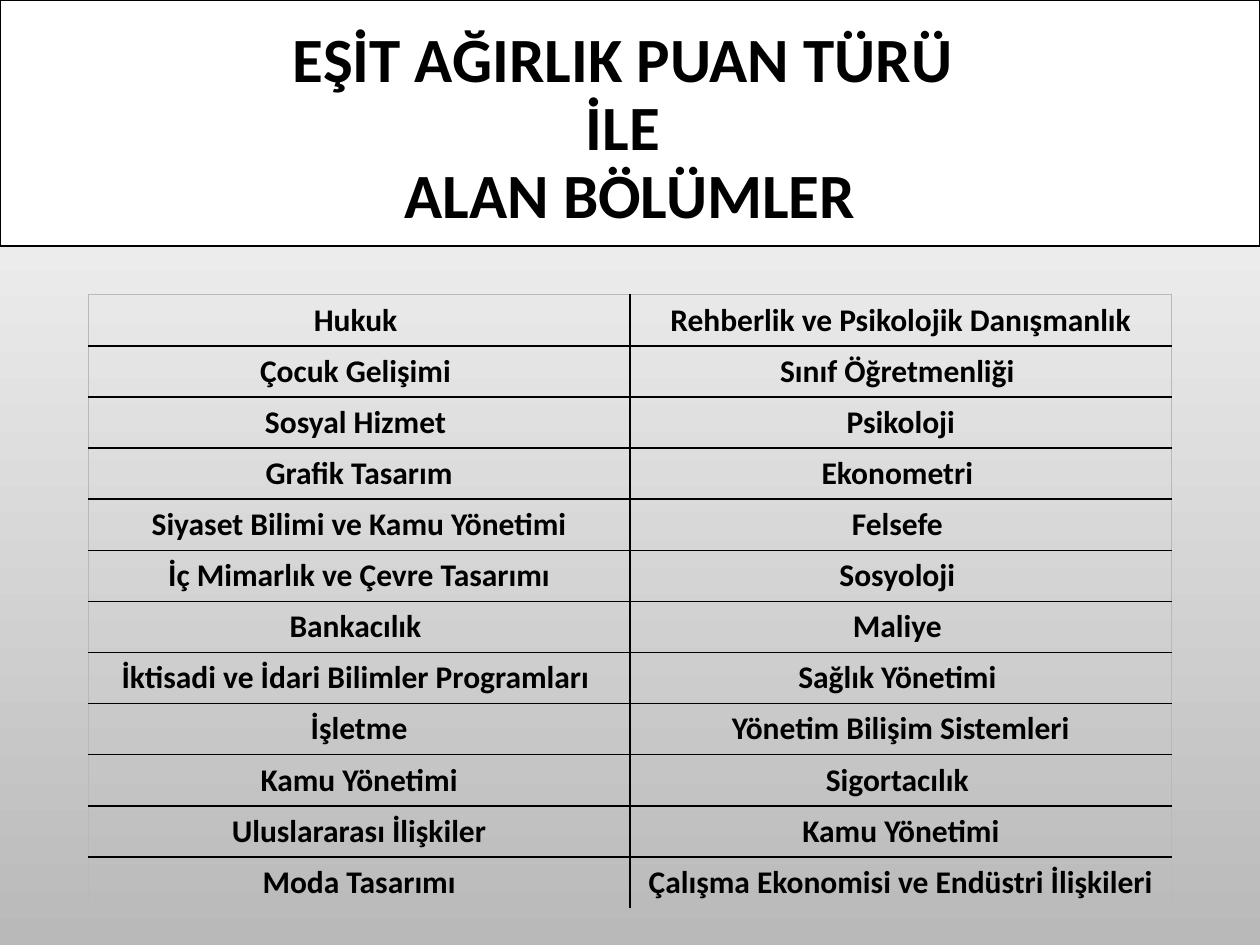
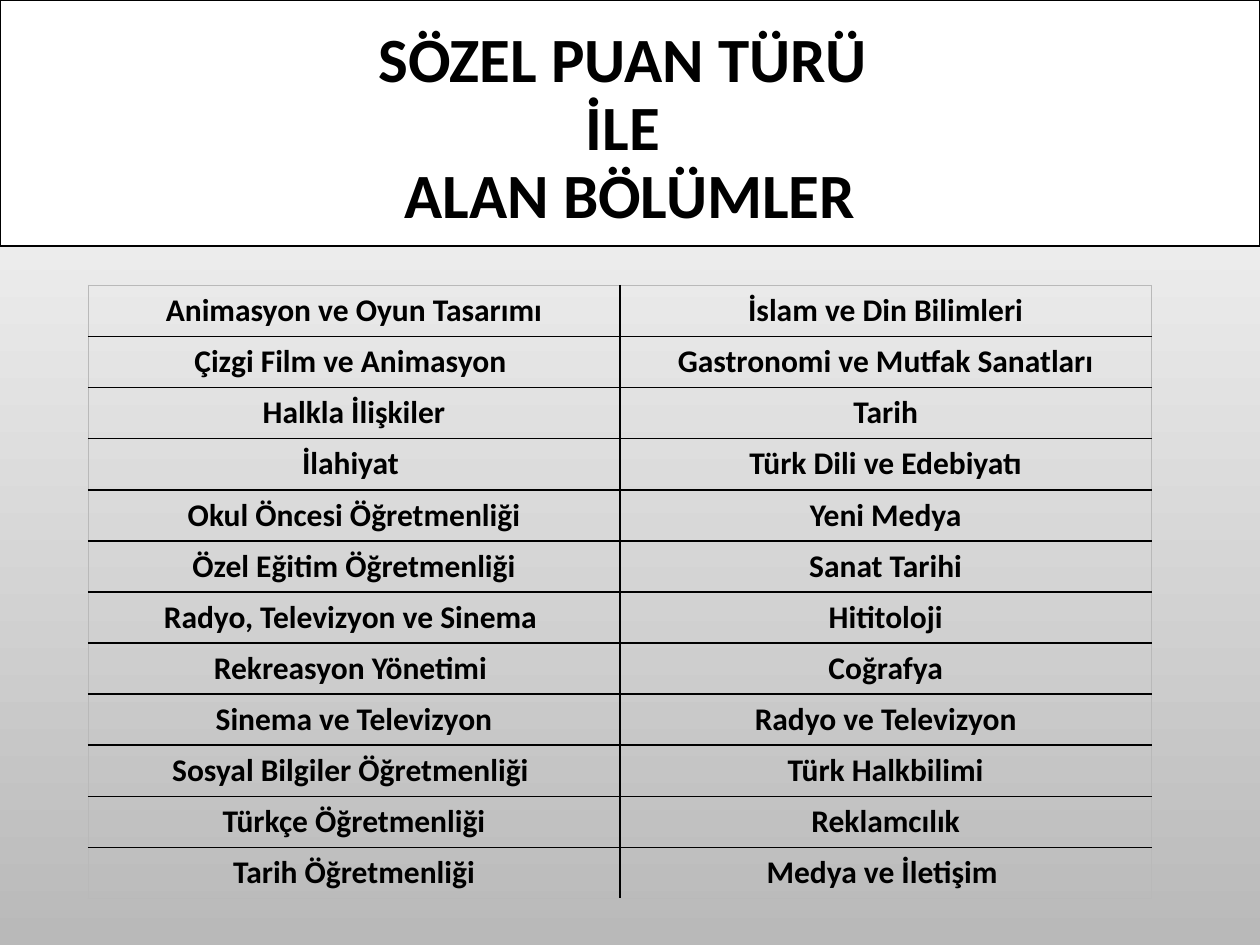
from dataclasses import dataclass

from lxml.etree import SubElement
from pptx import Presentation
from pptx.dml.color import RGBColor
from pptx.enum.shapes import MSO_SHAPE
from pptx.enum.text import MSO_ANCHOR, PP_ALIGN
from pptx.oxml.ns import qn
from pptx.presentation import Presentation as Deck
from pptx.slide import Slide
from pptx.table import _Cell
from pptx.text.text import _Paragraph
from pptx.util import Inches, Pt

BLACK = RGBColor(0x00, 0x00, 0x00)
WHITE = RGBColor(0xFF, 0xFF, 0xFF)
GREY = RGBColor(0xB9, 0xB9, 0xB9)
FONT = "Calibri"
SLIDE_WIDTH = Inches(10)
SLIDE_HEIGHT = Inches(7.5)
BAND_HEIGHT = 0.26
TABLE_LEFT = 0.07
ROW_HEIGHT = 0.054


@dataclass(frozen=True)
class ScoreType:
    heading: str
    table_top: float
    column_width: float
    departments: list[tuple[str, str]]


SCORE_TYPES = [
    ScoreType("EŞİT AĞIRLIK PUAN TÜRÜ ", 0.312, 0.43, [
        ("Hukuk ", "Rehberlik ve Psikolojik Danışmanlık"),
        ("Çocuk Gelişimi ", "Sınıf Öğretmenliği "),
        ("Sosyal Hizmet ", "Psikoloji"),
        ("Grafik Tasarım", "Ekonometri "),
        ("Siyaset Bilimi ve Kamu Yönetimi", "Felsefe "),
        ("İç Mimarlık ve Çevre Tasarımı", "Sosyoloji "),
        ("Bankacılık ", "Maliye "),
        ("İktisadi ve İdari Bilimler Programları ", "Sağlık Yönetimi "),
        ("İşletme", "Yönetim Bilişim Sistemleri"),
        ("Kamu Yönetimi", "Sigortacılık "),
        ("Uluslararası İlişkiler", "Kamu Yönetimi"),
        ("Moda Tasarımı", "Çalışma Ekonomisi ve Endüstri İlişkileri"),
    ]),
    ScoreType("SÖZEL PUAN TÜRÜ ", 0.302, 0.422, [
        ("Animasyon ve Oyun Tasarımı", "İslam ve Din Bilimleri"),
        ("Çizgi Film ve Animasyon ", "Gastronomi ve Mutfak Sanatları"),
        ("Halkla İlişkiler", "Tarih"),
        ("İlahiyat ", "Türk Dili ve Edebiyatı"),
        ("Okul Öncesi Öğretmenliği", "Yeni Medya"),
        ("Özel Eğitim Öğretmenliği", "Sanat Tarihi"),
        ("Radyo, Televizyon ve Sinema ", "Hititoloji"),
        ("Rekreasyon Yönetimi ", "Coğrafya"),
        ("Sinema ve Televizyon", "Radyo ve Televizyon"),
        ("Sosyal Bilgiler Öğretmenliği ", "Türk Halkbilimi"),
        ("Türkçe Öğretmenliği", "Reklamcılık"),
        ("Tarih Öğretmenliği", "Medya ve İletişim "),
    ]),
]


def across(share: float) -> int:
    return round(SLIDE_WIDTH * share)


def down(share: float) -> int:
    return round(SLIDE_HEIGHT * share)


def style_paragraph(paragraph: _Paragraph, size: int) -> None:
    paragraph.alignment = PP_ALIGN.CENTER
    paragraph.font.name = FONT
    paragraph.font.size = Pt(size)
    paragraph.font.bold = True
    paragraph.font.color.rgb = BLACK


def paint_background(deck: Deck) -> None:
    fill = deck.slide_master.background.fill
    fill.gradient()
    fill.gradient_angle = 270
    for stop, colour, position in zip(fill.gradient_stops, (WHITE, GREY), (0, 1)):
        stop.color.rgb = colour
        stop.position = position


def add_title_band(slide: Slide, heading: str) -> None:
    band = slide.shapes.add_shape(
        MSO_SHAPE.RECTANGLE, 0, 0, SLIDE_WIDTH, down(BAND_HEIGHT))
    band.shadow.inherit = False
    band.fill.solid()
    band.fill.fore_color.rgb = WHITE
    band.line.color.rgb = BLACK
    band.line.width = Pt(1.25)
    frame = band.text_frame
    frame.word_wrap = True
    frame.vertical_anchor = MSO_ANCHOR.MIDDLE
    frame.margin_top = Inches(0.17)
    title = frame.paragraphs[0]
    title.text = "\v".join((heading, "İLE ", "ALAN BÖLÜMLER"))
    title.line_spacing = 0.9
    style_paragraph(title, 36)


def set_borders(cell: _Cell, outer_sides: dict[str, bool]) -> None:
    properties = cell._tc.get_or_add_tcPr()
    for index, (side, is_outer) in enumerate(outer_sides.items()):
        border = SubElement(properties, qn(f"a:{side}"), w=str(Pt(0.5 if is_outer else 1)))
        properties.remove(border)
        properties.insert(index, border)
        solid = SubElement(border, qn("a:solidFill"))
        SubElement(solid, qn("a:srgbClr"), val=str(GREY if is_outer else BLACK))


def add_departments(slide: Slide, score_type: ScoreType) -> None:
    departments = score_type.departments
    row_count, column_count = len(departments), len(departments[0])
    table = slide.shapes.add_table(
        row_count, column_count, across(TABLE_LEFT), down(score_type.table_top),
        across(score_type.column_width * column_count),
        down(ROW_HEIGHT * row_count)).table
    table.first_row = False
    table.horz_banding = False
    for row, names in enumerate(departments):
        for column, name in enumerate(names):
            cell = table.cell(row, column)
            cell.fill.background()
            paragraph = cell.text_frame.paragraphs[0]
            paragraph.text = name
            style_paragraph(paragraph, 18)
            set_borders(cell, {
                "lnL": column == 0,
                "lnR": column == column_count - 1,
                "lnT": row == 0,
                "lnB": row == row_count - 1,
            })


def main() -> None:
    deck = Presentation()
    deck.slide_width = SLIDE_WIDTH
    deck.slide_height = SLIDE_HEIGHT
    paint_background(deck)
    for score_type in SCORE_TYPES:
        slide = deck.slides.add_slide(deck.slide_layouts[6])
        add_title_band(slide, score_type.heading)
        add_departments(slide, score_type)
    deck.save("out.pptx")


if __name__ == "__main__":
    main()
